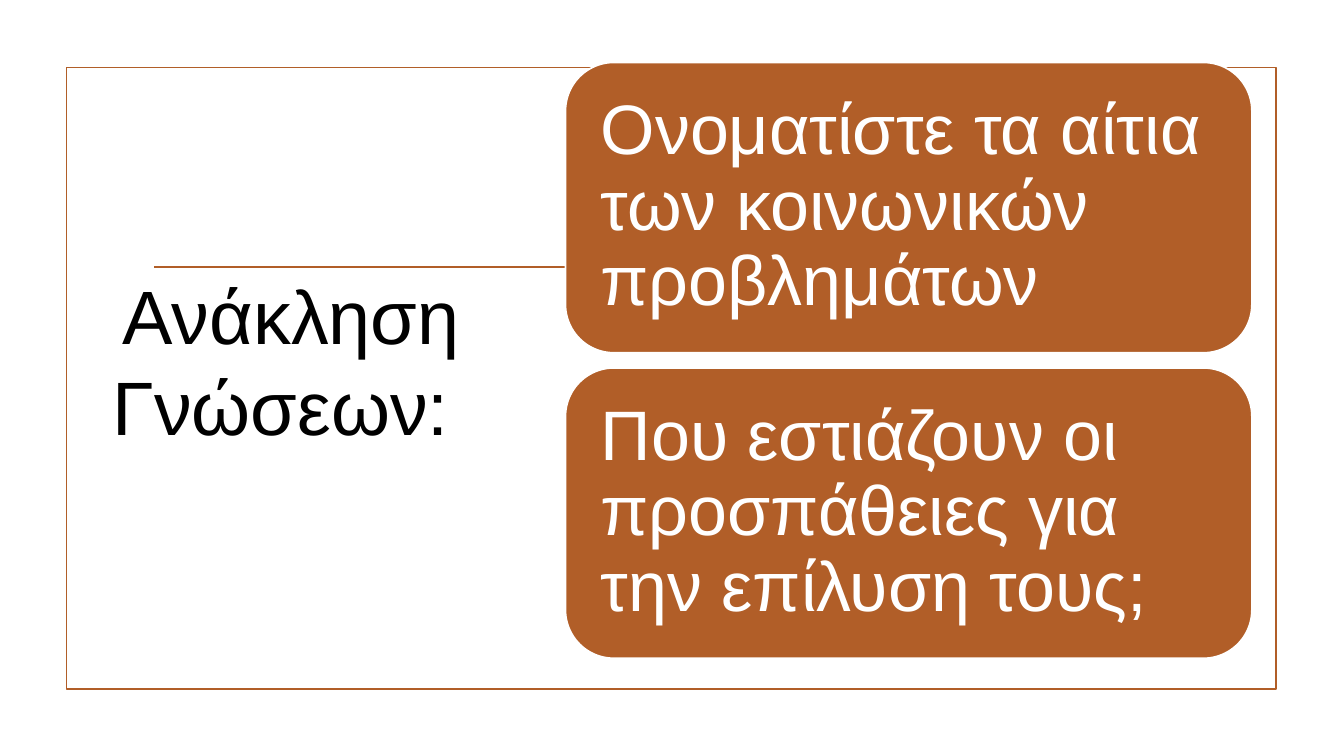
from pptx import Presentation
from pptx.dml.color import RGBColor
from pptx.enum.shapes import MSO_CONNECTOR, MSO_SHAPE
from pptx.enum.text import MSO_ANCHOR, MSO_AUTO_SIZE, PP_ALIGN
from pptx.oxml.ns import qn
from pptx.util import Pt
from lxml.etree import SubElement

COLORS = {"accent": "B15E28", "white": "FFFFFF", "black": "000000"}
FONT = "Arial"
LINE_WIDTH = 1.25
QUESTIONS = [
    "Ονοματίστε τα αίτια των κοινωνικών προβλημάτων",
    "Που εστιάζουν οι προσπάθειες για την επίλυση τους;",
]


def rgb(name):
    return RGBColor.from_string(COLORS[name])


def set_line(shape, color):
    shape.line.color.rgb = rgb(color)
    shape.line.width = Pt(LINE_WIDTH)


def set_text(tf, text, size, color, align, inset):
    tf.word_wrap = True
    tf.auto_size = MSO_AUTO_SIZE.NONE
    tf.vertical_anchor = MSO_ANCHOR.MIDDLE
    tf.margin_left = tf.margin_right = Pt(inset)
    tf.margin_top = tf.margin_bottom = Pt(inset)
    p = tf.paragraphs[0]
    p.alignment = align
    r = p.add_run()
    r.text = text
    r.font.name = FONT
    r.font.size = Pt(size)
    r.font.color.rgb = rgb(color)
    return p


def add_frame(s, x, y, w, h):
    frame = s.shapes.add_shape(MSO_SHAPE.RECTANGLE, Pt(x), Pt(y), Pt(w), Pt(h))
    frame.shadow.inherit = False
    frame.fill.background()
    set_line(frame, "accent")
    rule_y = Pt(y + 142.6)
    rule = s.shapes.add_connector(
        MSO_CONNECTOR.STRAIGHT, Pt(x + 62.7), rule_y, Pt(x + w - 61.4), rule_y)
    set_line(rule, "accent")
    SubElement(rule._element.spPr, qn("a:effectLst"))


def add_title(s, x, y, w, h):
    title = s.shapes.title
    title.left, title.top, title.width, title.height = Pt(x), Pt(y), Pt(w), Pt(h)
    p = set_text(title.text_frame, "Ανάκληση Γνώσεων: ", 54, "black", PP_ALIGN.CENTER, 5)
    p.line_spacing = 1.0
    p.space_before = Pt(0)


def add_questions(s, x, y, w, h, gap=10.8):
    card_h = (h - gap * (len(QUESTIONS) - 1)) / len(QUESTIONS)
    for i, question in enumerate(QUESTIONS):
        card = s.shapes.add_shape(
            MSO_SHAPE.ROUNDED_RECTANGLE,
            Pt(x), Pt(y + i * (card_h + gap)), Pt(w), Pt(card_h))
        card.shadow.inherit = False
        card.fill.solid()
        card.fill.fore_color.rgb = rgb("accent")
        set_line(card, "white")
        p = set_text(card.text_frame, question, 50, "white", PP_ALIGN.LEFT, 15)
        p.line_spacing = 0.9


def main():
    prs = Presentation()
    prs.slide_width, prs.slide_height = Pt(960), Pt(540)
    s = prs.slides.add_slide(prs.slide_layouts[5])
    add_frame(s, 47.5, 48.2, 864, 444)
    add_title(s, 66.2, 43.2, 283.7, 427.7)
    add_questions(s, 403.9, 44.6, 490.3, 425.6)
    prs.save("out.pptx")


if __name__ == "__main__":
    main()
